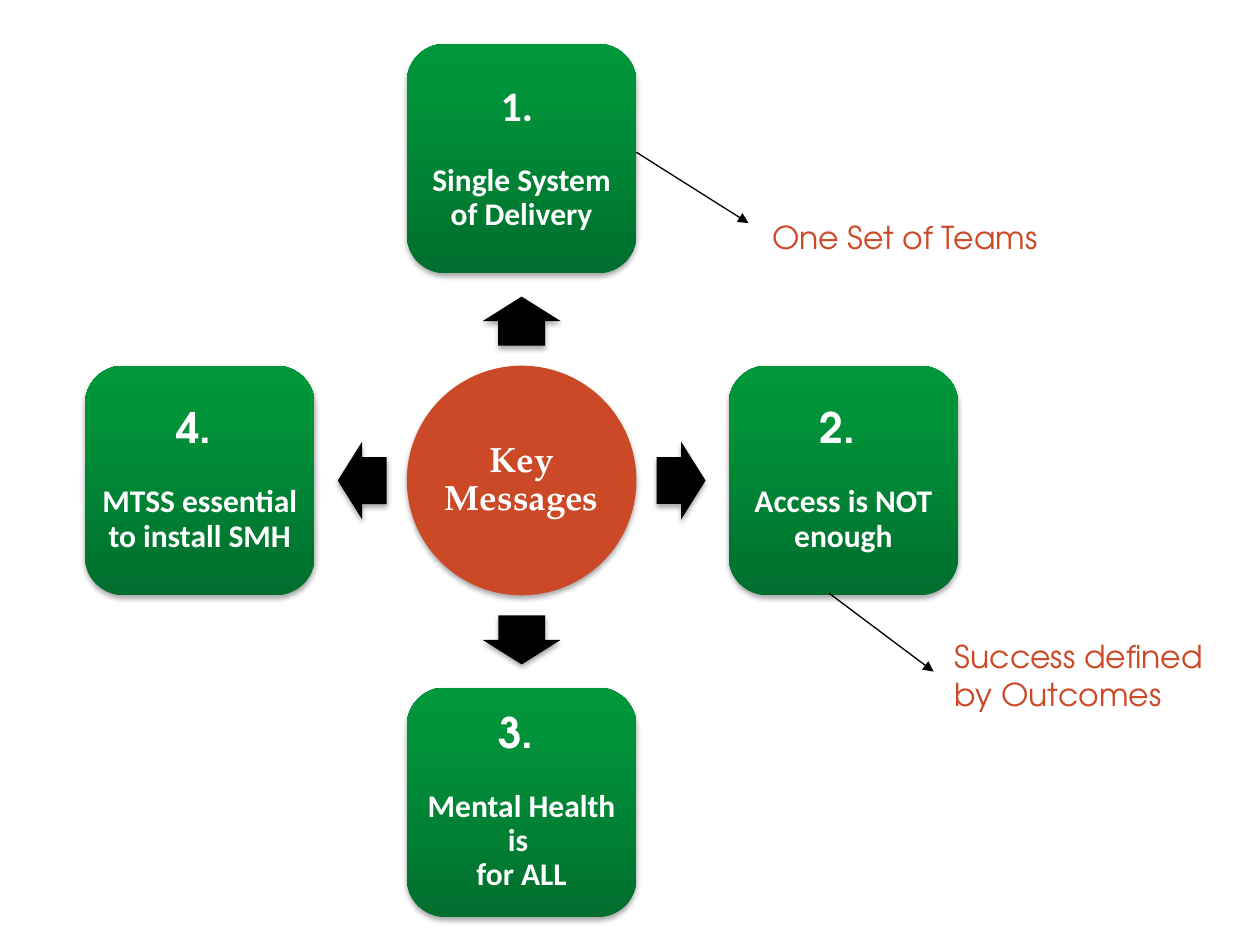
"""Build the Key Messages slide: a hub with four numbered messages around it."""
from math import cos, radians, sin

from lxml import etree
from pptx import Presentation
from pptx.dml.color import RGBColor
from pptx.enum.shapes import MSO_CONNECTOR, MSO_SHAPE
from pptx.enum.text import MSO_ANCHOR, PP_ALIGN
from pptx.oxml.ns import qn
from pptx.util import Pt

ELLIPSE, ROUNDED, ARROW = MSO_SHAPE.OVAL, MSO_SHAPE.ROUNDED_RECTANGLE, MSO_SHAPE.RIGHT_ARROW
STRAIGHT = MSO_CONNECTOR.STRAIGHT
CENTER, MIDDLE = PP_ALIGN.CENTER, MSO_ANCHOR.MIDDLE

HUB = "Key Messages"
MESSAGES = [
    (270, "1. ", "Calibri", "Single System of Delivery"),
    (0, "2. ", "TeX Gyre Adventor", "Access is NOT enough"),
    (90, "3. ", "TeX Gyre Adventor", "Mental Health is \vfor ALL"),
    (180, "4. ", "TeX Gyre Adventor", "MTSS essential to install SMH"),
]
CAPTIONS = [
    ("One Set of Teams", (434.2, 121, 169, 29)),
    ("Success defined \vby Outcomes", (538.6, 360.7, 163.4, 51)),
]
POINTERS = [((363.6, 87), (427.7, 127.5)), ((473.8, 339), (533.5, 383.8))]

THEME = {
    "accent": "CC4927", "dark": "000000", "light": "FFFFFF",
    "gradient": [(0, "006F2D"), (80, "00933A"), (100, "00973B")],
    "hub_font": "TeX Gyre Pagella", "body_font": "Calibri", "caption_font": "TeX Gyre Adventor",
    "hub_size": 20, "number_size": 24, "body_size": 18,
}
CENTER_X, CENTER_Y = 298.1, 274.6
NODE_SIZE = 131.2
NODE_DISTANCE, ARROW_DISTANCE = 183.9, 91.1
ARROW_WIDTH, ARROW_HEIGHT = 28, 44.6


def add_color_node(parent, tag, color, **attributes):
    node = etree.SubElement(parent, qn(tag), **attributes)
    return etree.SubElement(node, qn("a:srgbClr"), val=color)


def add_solid(slide, kind, x, y, width, height, color):
    shape = slide.shapes.add_shape(
        kind, Pt(x - width / 2), Pt(y - height / 2), Pt(width), Pt(height))
    shape.fill.solid()
    shape.fill.fore_color.rgb = RGBColor.from_string(color)
    shape.line.fill.background()
    shape.shadow.inherit = False
    effects = shape.element.spPr.find(qn("a:effectLst"))
    shadow = add_color_node(
        effects, "a:outerShdw", THEME["dark"], blurRad=str(Pt(3.1)), dist=str(Pt(1.8)),
        dir="5400000", rotWithShape="0")
    etree.SubElement(shadow, qn("a:alpha"), val="35000")
    return shape


def fill_gradient(shape):
    shape.fill.gradient()
    shape.fill.gradient_angle = 90
    stops = shape.element.spPr.find(".//" + qn("a:gsLst"))
    for stop in list(stops):
        stops.remove(stop)
    for position, color in THEME["gradient"]:
        add_color_node(stops, "a:gs", color, pos=str(position * 1000))


def style_paragraph(paragraph, text, font, size, color, bold=False):
    paragraph.text = text
    paragraph.font.name = font
    paragraph.font.size = Pt(size)
    paragraph.font.bold = bold
    paragraph.font.color.rgb = RGBColor.from_string(color)


def write_centered(shape, lines):
    frame = shape.text_frame
    frame.word_wrap = True
    frame.vertical_anchor = MIDDLE
    frame.margin_left = frame.margin_right = frame.margin_top = frame.margin_bottom = Pt(2)
    for index, (text, font, size) in enumerate(lines):
        paragraph = frame.add_paragraph() if index else frame.paragraphs[0]
        style_paragraph(paragraph, text, font, size, THEME["light"], bold=True)
        paragraph.alignment = CENTER
        paragraph.line_spacing = 0.9
        paragraph.space_before = Pt(19 if index else 0)


def add_message(slide, angle, number, number_font, text):
    across, down = cos(radians(angle)), sin(radians(angle))
    arrow = add_solid(
        slide, ARROW, CENTER_X + ARROW_DISTANCE * across, CENTER_Y + ARROW_DISTANCE * down,
        ARROW_WIDTH, ARROW_HEIGHT, THEME["dark"])
    arrow.adjustments[0], arrow.adjustments[1] = 0.6, 0.5
    arrow.rotation = angle
    node = add_solid(
        slide, ROUNDED, CENTER_X + NODE_DISTANCE * across, CENTER_Y + NODE_DISTANCE * down,
        NODE_SIZE, NODE_SIZE, THEME["dark"])
    fill_gradient(node)
    write_centered(node, [
        (number, number_font, THEME["number_size"]),
        (text, THEME["body_font"], THEME["body_size"]),
    ])


def add_caption(slide, text, box):
    frame = slide.shapes.add_textbox(*map(Pt, box)).text_frame
    frame.word_wrap = True
    style_paragraph(frame.paragraphs[0], text, THEME["caption_font"], THEME["body_size"],
                    THEME["accent"])


def add_pointer(slide, start, end):
    connector = slide.shapes.add_connector(STRAIGHT, *map(Pt, start + end))
    connector.line.color.rgb = RGBColor.from_string(THEME["dark"])
    connector.line.width = Pt(0.75)
    properties = connector.element.spPr
    etree.SubElement(properties.find(qn("a:ln")), qn("a:tailEnd"), type="triangle")
    etree.SubElement(properties, qn("a:effectLst"))


def main():
    presentation = Presentation()
    presentation.slide_width, presentation.slide_height = Pt(720), Pt(540)
    slide = presentation.slides.add_slide(presentation.slide_layouts[6])
    hub = add_solid(slide, ELLIPSE, CENTER_X, CENTER_Y, NODE_SIZE, NODE_SIZE, THEME["accent"])
    write_centered(hub, [(HUB, THEME["hub_font"], THEME["hub_size"])])
    for message in MESSAGES:
        add_message(slide, *message)
    for text, box in CAPTIONS:
        add_caption(slide, text, box)
    for start, end in POINTERS:
        add_pointer(slide, start, end)
    presentation.save("out.pptx")


if __name__ == "__main__":
    main()
